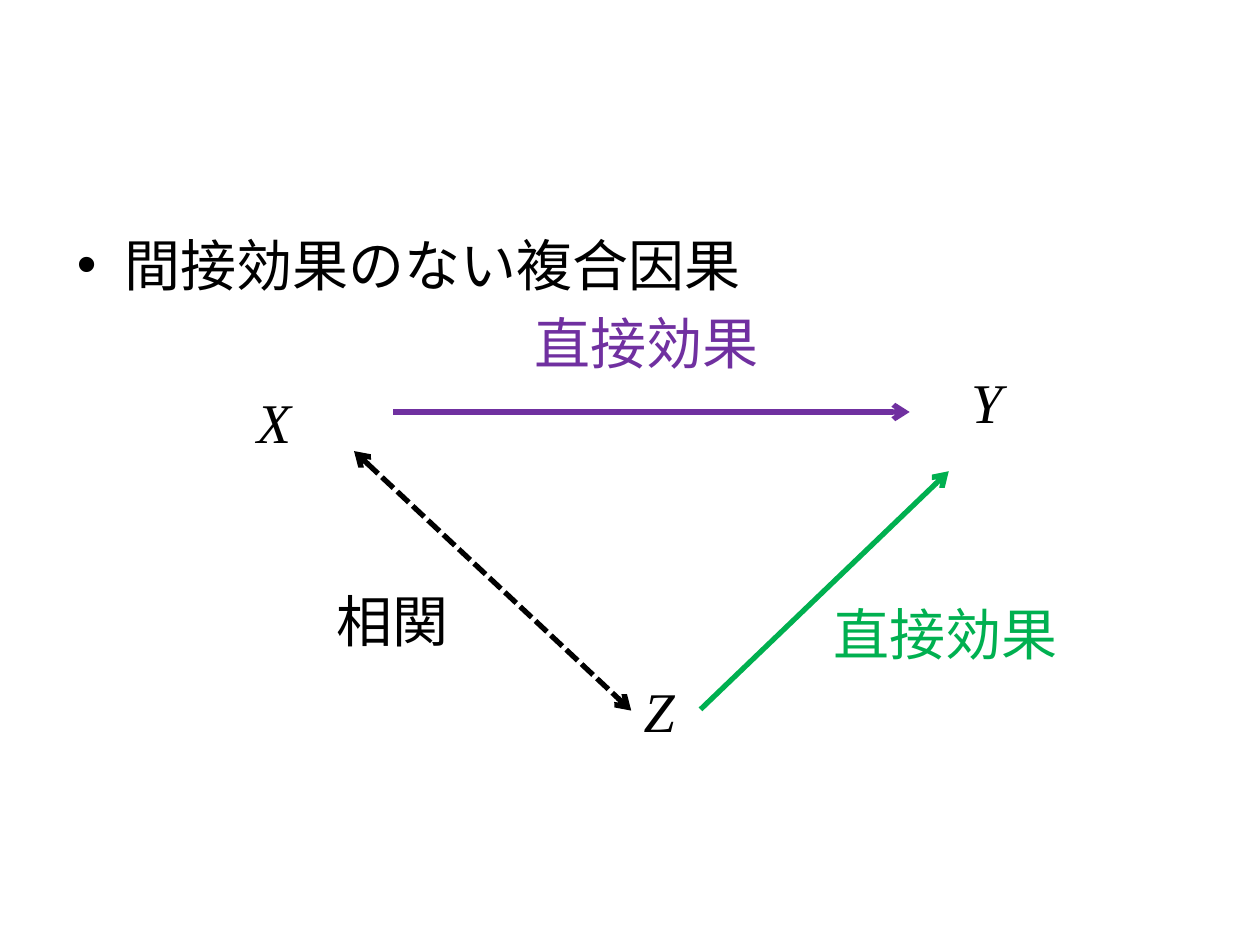
from lxml import etree
from pptx import Presentation
from pptx.dml.color import RGBColor
from pptx.enum import dml, shapes, text
from pptx.oxml.ns import qn
from pptx.util import Inches, Pt

COLORS = {"black": "000000", "green": "00B050", "purple": "7030A0"}
SANS, SERIF = "Calibri", "Times New Roman"
LABEL_HEIGHT = 0.64


def add_run(p, words, color="black", font=SANS, italic=None):
    r = p.add_run()
    r.text = words
    r.font.size = Pt(32)
    r.font.name = font
    r.font.italic = italic
    r.font.color.rgb = RGBColor.from_string(COLORS[color])


def add_bullet(s, words):
    sp = s.placeholders[1]
    sp.left, sp.top = Inches(0.51), Inches(1.78)
    sp.width, sp.height = Inches(9), Inches(4.95)
    add_run(sp.text_frame.paragraphs[0], words)


def add_label(parent, words, left, top, width, **style):
    sp = parent.add_textbox(Inches(left), Inches(top), Inches(width), Inches(LABEL_HEIGHT))
    tf = sp.text_frame
    tf.word_wrap = False
    tf.auto_size = text.MSO_AUTO_SIZE.SHAPE_TO_FIT_TEXT
    add_run(tf.paragraphs[0], words, **style)


def add_arrow(parent, start, end, color, two_way=False):
    """A two-way arrow is dashed and has a head at each end."""
    points = [Inches(v) for v in (*start, *end)]
    line = parent.add_connector(shapes.MSO_CONNECTOR.STRAIGHT, *points)
    line.line.width = Pt(3)
    line.line.color.rgb = RGBColor.from_string(COLORS[color])
    if two_way:
        line.line.dash_style = dml.MSO_LINE.SQUARE_DOT
    ln = line.line._get_or_add_ln()
    for tag in ("a:headEnd", "a:tailEnd") if two_way else ("a:tailEnd",):
        etree.SubElement(ln, qn(tag), type="arrow")
    etree.SubElement(line._element.spPr, qn("a:effectLst"))


def add_causal_diagram(s):
    group = s.shapes.add_group_shape().shapes
    add_arrow(group, (2.81, 3.58), (5.01, 5.64), "black", two_way=True)
    add_arrow(group, (5.56, 5.63), (7.53, 3.74), "green")
    add_arrow(group, (3.12, 3.27), (7.22, 3.27), "purple")

    variables = [("X", 1.94, 3.03, 0.48), ("Z", 5.01, 5.32, 0.45), ("Y", 7.61, 2.87, 0.45)]
    for name, left, top, width in variables:
        add_label(group, name, left, top, width, font=SERIF, italic=True)

    for left, top, color in [(4.14, 2.4, "purple"), (6.52, 4.71, "green")]:
        add_label(group, "直接効果", left, top, 2, color=color)


def main():
    prs = Presentation()
    prs.slide_width, prs.slide_height = Inches(10), Inches(7.5)
    s = prs.slides.add_slide(prs.slide_layouts.get_by_name("Title and Content"))
    title = s.shapes.title._element
    title.getparent().remove(title)

    add_bullet(s, "間接効果のない複合因果")
    add_causal_diagram(s)
    add_label(s.shapes, "相関", 2.57, 4.61, 1.1)
    prs.save("out.pptx")


if __name__ == "__main__":
    main()
